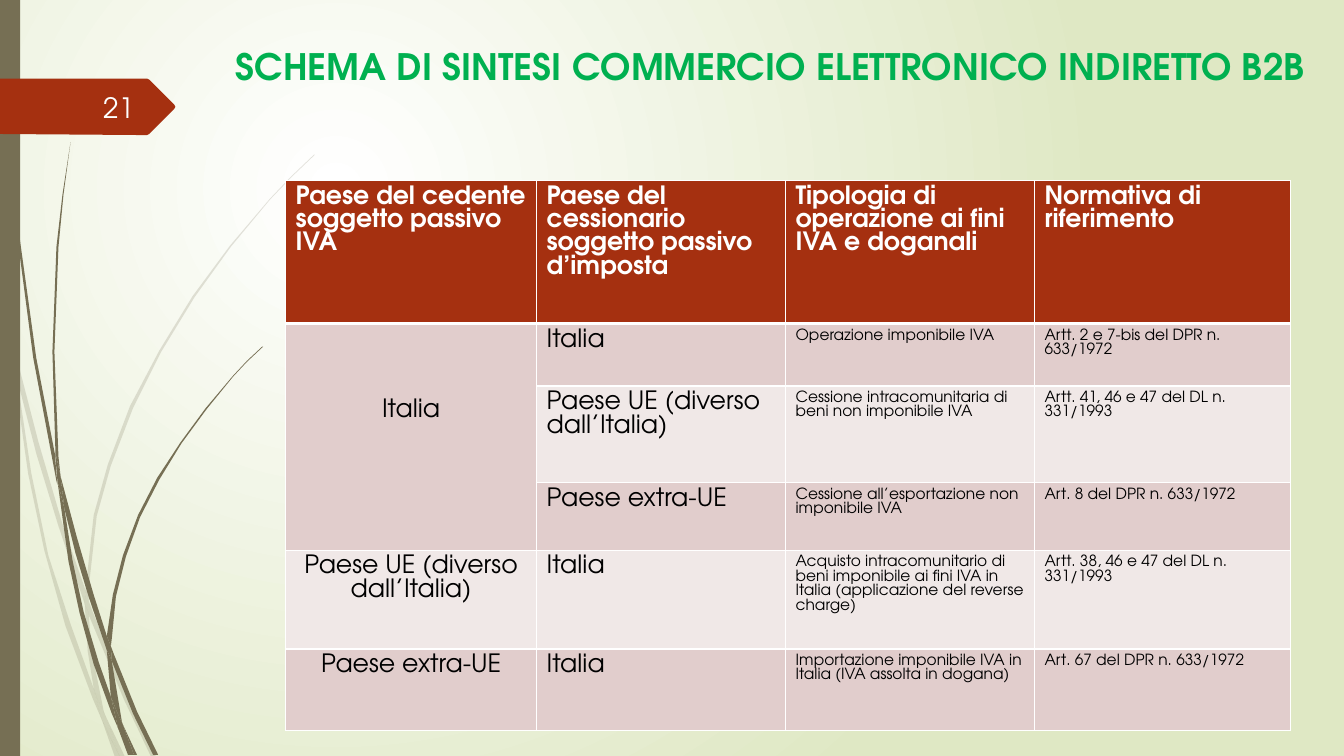
"""Build the slide that summarises VAT rules for indirect B2B e-commerce."""
from dataclasses import dataclass

import lxml.etree
import pptx
import pptx.dml.color
import pptx.enum.shapes
import pptx.enum.text
import pptx.oxml.ns
import pptx.util

Pt = pptx.util.Pt
ALIGN = pptx.enum.text.PP_ALIGN
qn = pptx.oxml.ns.qn

FONT = "TeX Gyre Adventor"
OLIVE, RUST, WHITE, BLACK = "766F54", "A53010", "FFFFFF", "000000"
BAND_DARK, BAND_LIGHT = "E1CDCC", "F0E8E7"
GRID = Pt(0.72)


@dataclass(frozen=True)
class TextStyle:
    size: float
    color: str = BLACK
    bold: bool = False
    align: ALIGN = ALIGN.LEFT


PALE_BLADES = (
    ((11, 350), (9, 322), (0, 282), (0, 299), (10, 344)),
    ((58, 522), (84, 599), (85, 586), (62, 520), (38, 438), (14, 345), (17, 376), (36, 450)),
    ((92, 607), (88, 596), (88, 610), (123, 694), (150, 751), (155, 751), (127, 692)),
    ((119, 751), (124, 751), (105, 711)),
    ((93, 683), (70, 619), (48, 551), (31, 469), (17, 376), (11, 350), (28, 470), (44, 546),
     (65, 621), (92, 693), (101, 714), (99, 707)),
    ((84, 599), (87, 646), (93, 683), (96, 692), (105, 711), (103, 706), (91, 646), (88, 610), (88, 608)),
    ((88, 584), (96, 512), (110, 462), (132, 405), (160, 349), (193, 295), (229, 245), (268, 198),
     (290, 175), (312, 154), (312, 153), (289, 175), (268, 197), (228, 244), (191, 294), (158, 348),
     (129, 403), (107, 461), (93, 511), (85, 584), (85, 586), (88, 596)),
    ((101, 714), (114, 751), (119, 751)),
    ((88, 608), (88, 610), (88, 596), (85, 586), (84, 599)),
    ((96, 692), (93, 683), (99, 707), (101, 714), (119, 751), (105, 711)),
)
DARK_BLADES = (
    ((7, 110), (17, 233), (33, 355), (56, 477), (57, 481), (55, 457), (55, 453), (36, 355),
     (19, 232), (8, 109), (5, 48), (4, 0), (3, 0), (4, 48)),
    ((88, 592), (106, 645), (106, 633), (106, 631), (93, 590), (76, 532), (60, 472), (64, 505), (75, 549)),
    ((113, 649), (110, 641), (111, 656), (132, 708), (152, 749), (157, 749), (136, 706)),
    ((110, 691), (98, 657), (83, 607), (72, 556), (64, 505), (57, 477), (68, 557), (79, 608),
     (93, 659), (111, 708), (117, 722), (116, 717)),
    ((60, 472), (58, 453), (54, 349), (58, 245), (63, 193), (70, 141), (62, 193), (56, 245),
     (52, 349), (55, 449)),
    ((133, 749), (136, 749), (122, 719)),
    ((57, 477), (64, 505), (60, 472), (55, 449), (55, 453)),
    ((111, 633), (115, 592), (125, 552), (139, 513), (158, 476), (180, 440), (205, 406), (231, 374),
     (245, 359), (261, 344), (260, 344), (245, 358), (231, 373), (204, 405), (179, 439), (156, 474),
     (137, 511), (122, 551), (112, 590), (106, 631), (110, 641)),
    ((117, 722), (127, 749), (131, 749)),
    ((106, 645), (110, 691), (116, 706), (122, 719), (121, 716), (111, 656), (109, 651)),
    ((106, 645), (109, 651), (111, 656), (110, 641), (106, 631), (106, 633)),
    ((116, 706), (110, 691), (116, 717), (117, 722), (130, 749), (133, 749), (122, 719)),
)
NUMBER_ARROW = ((173, 108), (148, 133), (146, 134), (136, 134), (0, 133), (0, 78), (136, 78),
                (146, 78), (148, 79), (173, 104), (174, 106))

COLUMN_WIDTHS = (179.28, 177.84, 177.84, 182.88)
ROW_HEIGHTS = (102.24, 44.64, 69.12, 48.24, 70.56, 58.32)
RULES = (
    ("Paese del cedente soggetto passivo IVA", "Paese del cessionario soggetto passivo d’imposta",
     "Tipologia di operazione ai fini IVA e doganali", "Normativa di riferimento"),
    ("Italia", "Italia", "Operazione imponibile IVA", "Artt. 2 e 7-bis del DPR n. 633/1972"),
    ("", "Paese UE (diverso dall’Italia)", "Cessione intracomunitaria di beni non imponibile IVA",
     "Artt. 41, 46 e 47 del DL n. 331/1993"),
    ("", "Paese extra-UE", "Cessione all’esportazione non imponibile IVA", "Art. 8 del DPR n. 633/1972"),
    ("Paese UE (diverso dall’Italia)", "Italia",
     "Acquisto intracomunitario di beni imponibile ai fini IVA in Italia (applicazione del reverse charge)",
     "Artt. 38, 46 e 47 del DL n. 331/1993"),
    ("Paese extra-UE", "Italia", "Importazione imponibile IVA in Italia (IVA assolta in dogana)",
     "Art. 67 del DPR n. 633/1972"),
)


def rgb(color: str) -> pptx.dml.color.RGBColor:
    return pptx.dml.color.RGBColor.from_string(color)


def write(frame, text: str, style: TextStyle) -> None:
    frame.text = text
    frame.word_wrap = True
    paragraph = frame.paragraphs[0]
    paragraph.alignment = style.align
    for target in (paragraph, *paragraph.runs):
        target.font.name = FONT
        target.font.size = Pt(style.size)
        target.font.bold = style.bold
        target.font.color.rgb = rgb(style.color)


def paint(shape, color: str, opacity: int = 100) -> None:
    shape.shadow.inherit = False
    shape.fill.solid()
    shape.fill.fore_color.rgb = rgb(color)
    shape.line.fill.background()
    if opacity < 100:
        tint = shape.fill._xPr.find(qn("a:solidFill"))[0]
        lxml.etree.SubElement(tint, qn("a:alpha"), val=str(opacity * 1000))


def draw_outline(slide, points: tuple, color: str, opacity: int = 100) -> None:
    builder = slide.shapes.build_freeform(*points[0], scale=GRID)
    builder.add_line_segments(points[1:], close=True)
    paint(builder.convert_to_shape(), color, opacity)


def draw_background(slide) -> None:
    fill = slide.background.fill
    fill.gradient()
    for stop, color, position in zip(fill.gradient_stops, (WHITE, "DFE8C4"), (0, 1)):
        stop.color.rgb = rgb(color)
        stop.position = position
    gradient = fill._xPr.find(qn("a:gradFill"))
    gradient.remove(gradient.find(qn("a:lin")))
    circle = lxml.etree.SubElement(gradient, qn("a:path"), {"path": "circle"})
    lxml.etree.SubElement(circle, qn("a:fillToRect"), l="50000", t="50000", r="100000", b="100000")


def add_borders(cell, top: float, bottom: float) -> None:
    properties = cell._tc.get_or_add_tcPr()
    for side, width in (("L", 1), ("R", 1), ("T", top), ("B", bottom)):
        line = lxml.etree.SubElement(properties, qn(f"a:ln{side}"), w=str(Pt(width)))
        solid = lxml.etree.SubElement(line, qn("a:solidFill"))
        lxml.etree.SubElement(solid, qn("a:srgbClr"), val=WHITE)


def cell_style(row: int, column: int) -> TextStyle:
    if row == 0:
        return TextStyle(18, WHITE, True)
    return TextStyle(18 if column < 2 else 11, align=ALIGN.LEFT if column else ALIGN.CENTER)


def draw_rules(slide) -> None:
    table = slide.shapes.add_table(len(ROW_HEIGHTS), len(COLUMN_WIDTHS), Pt(204), Pt(128.88),
                                   Pt(sum(COLUMN_WIDTHS)), Pt(sum(ROW_HEIGHTS))).table
    for column, width in zip(table.columns, COLUMN_WIDTHS):
        column.width = Pt(width)
    for row, height in zip(table.rows, ROW_HEIGHTS):
        row.height = Pt(height)
    for r, texts in enumerate(RULES):
        for c, text in enumerate(texts):
            cell = table.cell(r, c)
            write(cell.text_frame, text, cell_style(r, c))
            add_borders(cell, top=3 if r == 1 else 1, bottom=3 if r == 0 else 1)
            cell.fill.solid()
            cell.fill.fore_color.rgb = rgb(RUST if r == 0 else BAND_DARK if r % 2 else BAND_LIGHT)
    domestic_seller = table.cell(1, 0)
    domestic_seller.merge(table.cell(3, 0))
    domestic_seller.margin_top = Pt(54)


def main() -> None:
    deck = pptx.Presentation()
    deck.slide_width, deck.slide_height = Pt(960), Pt(540)
    slide = deck.slides.add_slide(deck.slide_layouts[5])
    draw_background(slide)
    for blades, opacity in ((PALE_BLADES, 20), (DARK_BLADES, 100)):
        for blade in blades:
            draw_outline(slide, blade, OLIVE, opacity)
    side_band = slide.shapes.add_shape(pptx.enum.shapes.MSO_SHAPE.RECTANGLE, 0, 0, Pt(14.4), Pt(540))
    paint(side_band, OLIVE)
    draw_outline(slide, NUMBER_ARROW, RUST)

    heading = slide.shapes.title
    heading.left, heading.top, heading.width, heading.height = Pt(161.28), Pt(28.08), Pt(781.2), Pt(100.8)
    write(heading.text_frame, "SCHEMA DI SINTESI COMMERCIO ELETTRONICO INDIRETTO B2B",
          TextStyle(26, "00B050", True, ALIGN.JUSTIFY))
    heading.text_frame.vertical_anchor = pptx.enum.text.MSO_ANCHOR.TOP
    heading.text_frame.auto_size = pptx.enum.text.MSO_AUTO_SIZE.NONE

    draw_rules(slide)
    page_number = slide.shapes.add_textbox(Pt(41.76), Pt(61.92), Pt(61.2), Pt(28.8))
    write(page_number.text_frame, "21", TextStyle(20, "FEFFFF", align=ALIGN.RIGHT))
    page_number.text_frame.vertical_anchor = pptx.enum.text.MSO_ANCHOR.MIDDLE
    deck.save("out.pptx")


if __name__ == "__main__":
    main()
